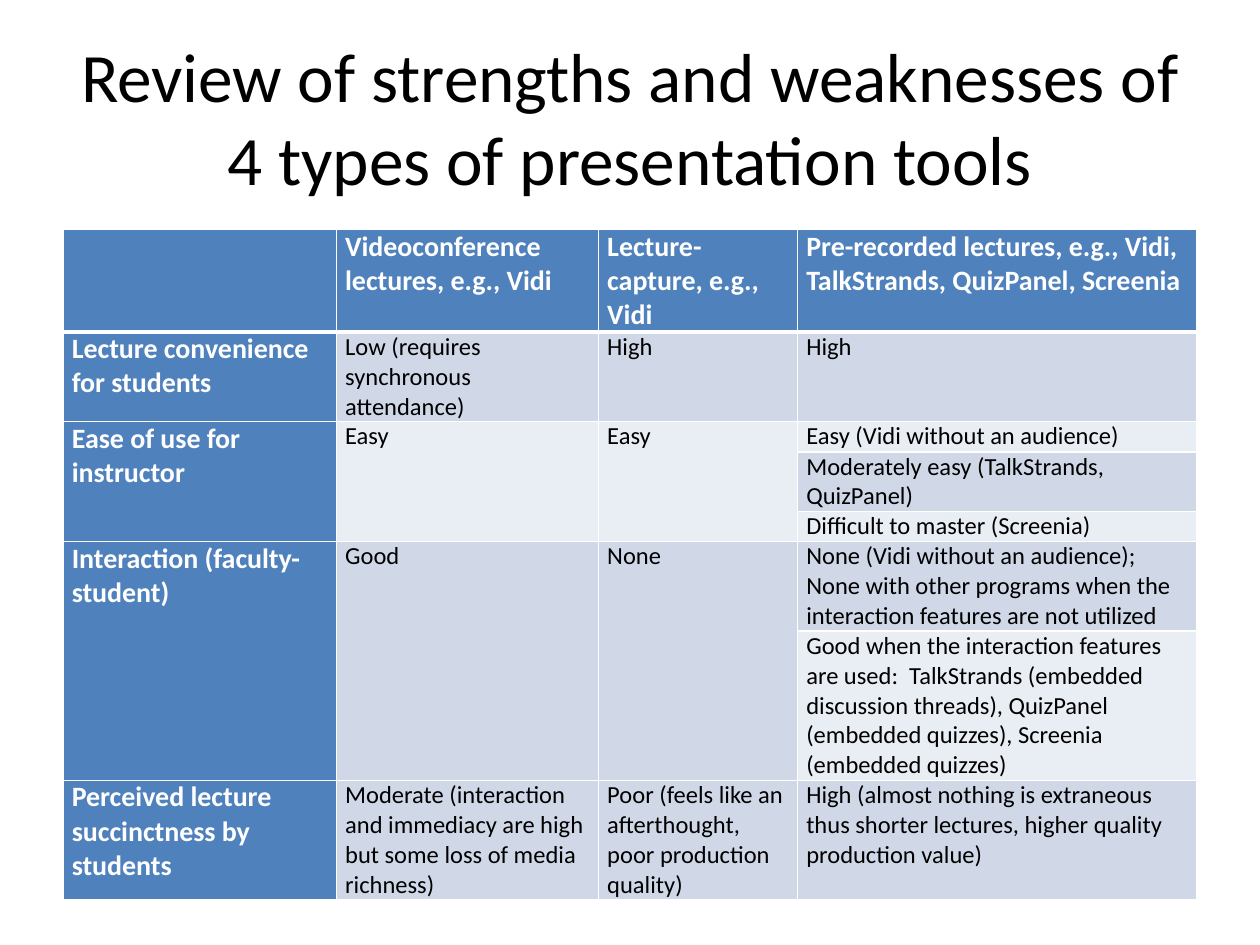
"""Build a slide that compares presentation tools in a table."""
from lxml import etree
from pptx import Presentation
from pptx.dml.color import RGBColor
from pptx.enum.text import MSO_ANCHOR, MSO_AUTO_SIZE, PP_ALIGN
from pptx.oxml.ns import qn
from pptx.util import Inches, Pt

MIDDLE, TOP = MSO_ANCHOR.MIDDLE, MSO_ANCHOR.TOP
NO_AUTOFIT = MSO_AUTO_SIZE.NONE
CENTER, LEFT = PP_ALIGN.CENTER, PP_ALIGN.LEFT

BLACK = RGBColor(0x00, 0x00, 0x00)
WHITE = RGBColor(0xFF, 0xFF, 0xFF)
BLUE = RGBColor(0x4F, 0x81, 0xBD)
DARK_BAND = RGBColor(0xD0, 0xD8, 0xE8)
LIGHT_BAND = RGBColor(0xE9, 0xED, 0xF4)

TITLE_FONT = {"name": "Calibri", "size": Pt(39.6), "bold": False}
HEADING_FONT = {"name": "Calibri", "size": Pt(16), "bold": True}
BODY_FONT = {"name": "Calibri", "size": Pt(14), "bold": False}
CELL_FORMAT = {
    "margin_left": Inches(0.07),
    "margin_right": Inches(0.07),
    "margin_top": 0,
    "margin_bottom": 0,
    "vertical_anchor": TOP,
}

TITLE = "Review of strengths and weaknesses of 4 types of presentation tools"
COLUMN_WIDTHS = [2.17, 2.08, 1.58, 3.17]
ROW_HEIGHTS = [0.81, 0.71, 0.24, 0.47, 0.24, 0.71, 1.18, 0.95]
ROW_GROUPS = [(2, 4), (5, 6)]
ROWS = [
    ["", "Videoconference lectures, e.g., Vidi", "Lecture-capture, e.g., Vidi",
     "Pre-recorded lectures, e.g., Vidi, TalkStrands, QuizPanel, Screenia"],
    ["Lecture convenience for students",
     "Low (requires synchronous attendance)", "High", "High"],
    ["Ease of use for instructor", "Easy", "Easy",
     "Easy (Vidi without an audience)"],
    ["", "", "", "Moderately easy (TalkStrands, QuizPanel)"],
    ["", "", "", "Difficult to master (Screenia)"],
    ["Interaction (faculty-student)", "Good", "None",
     "None (Vidi without an audience); None with other programs when the "
     "interaction features are not utilized"],
    ["", "", "",
     "Good when the interaction features are used:  TalkStrands (embedded "
     "discussion threads), QuizPanel (embedded quizzes), Screenia "
     "(embedded quizzes)"],
    ["Perceived lecture succinctness by students",
     "Moderate (interaction and immediacy are high but some loss of media "
     "richness)",
     "Poor (feels like an afterthought, poor production quality)",
     "High (almost nothing is extraneous thus shorter lectures, higher "
     "quality production value)"],
]


def apply_format(target, values):
    """Set each named attribute on the target."""
    for name, value in values.items():
        setattr(target, name, value)


def write_text(paragraph, text, font, color, alignment):
    """Put formatted text into a paragraph."""
    paragraph.text = text
    paragraph.alignment = alignment
    apply_format(paragraph.font, font)
    paragraph.font.color.rgb = color
    for run in paragraph.runs:
        apply_format(run.font, font)
        run.font.color.rgb = color


def add_borders(cell, row):
    """Outline a cell in white, with a thick rule under the header row."""
    properties = cell._tc.get_or_add_tcPr()
    thick_side = {0: "lnB", 1: "lnT"}.get(row)
    for side in ("lnL", "lnR", "lnT", "lnB"):
        width = Pt(3 if side == thick_side else 1)
        line = etree.SubElement(properties, qn(f"a:{side}"), w=str(width))
        fill = etree.SubElement(line, qn("a:solidFill"))
        etree.SubElement(fill, qn("a:srgbClr"), val=str(WHITE))


def format_cell(cell, row, column, text):
    """Fill, outline and write one table cell."""
    heading = row == 0 or column == 0
    band = DARK_BAND if row % 2 else LIGHT_BAND
    apply_format(cell, CELL_FORMAT)
    add_borders(cell, row)
    cell.fill.solid()
    cell.fill.fore_color.rgb = BLUE if heading else band
    write_text(cell.text_frame.paragraphs[0], text,
               HEADING_FONT if heading else BODY_FONT,
               WHITE if heading else BLACK, LEFT)


def add_title(slide):
    """Place and write the slide title."""
    title = slide.shapes.title
    apply_format(title, {"left": Inches(0.5), "top": Inches(0.3),
                         "width": Inches(9), "height": Inches(1.25)})
    apply_format(title.text_frame, {"word_wrap": True,
                                    "auto_size": NO_AUTOFIT,
                                    "vertical_anchor": MIDDLE})
    write_text(title.text_frame.paragraphs[0], TITLE, TITLE_FONT, BLACK, CENTER)


def add_comparison_table(slide):
    """Add the comparison table with its grouped rows."""
    table = slide.shapes.add_table(
        len(ROWS), len(COLUMN_WIDTHS), Inches(0.5), Inches(1.82),
        Inches(sum(COLUMN_WIDTHS)), Inches(sum(ROW_HEIGHTS))).table
    for column, width in zip(table.columns, COLUMN_WIDTHS):
        column.width = Inches(width)
    for row, height in zip(table.rows, ROW_HEIGHTS):
        row.height = Inches(height)
    for row, texts in enumerate(ROWS):
        for column, text in enumerate(texts):
            format_cell(table.cell(row, column), row, column, text)
    for first, last in ROW_GROUPS:
        for column in range(3):
            table.cell(first, column).merge(table.cell(last, column))


def main():
    """Build and save the presentation."""
    presentation = Presentation()
    presentation.slide_width = Inches(10)
    presentation.slide_height = Inches(7.5)
    slide = presentation.slides.add_slide(presentation.slide_layouts[5])
    add_title(slide)
    add_comparison_table(slide)
    presentation.save("out.pptx")


if __name__ == "__main__":
    main()
